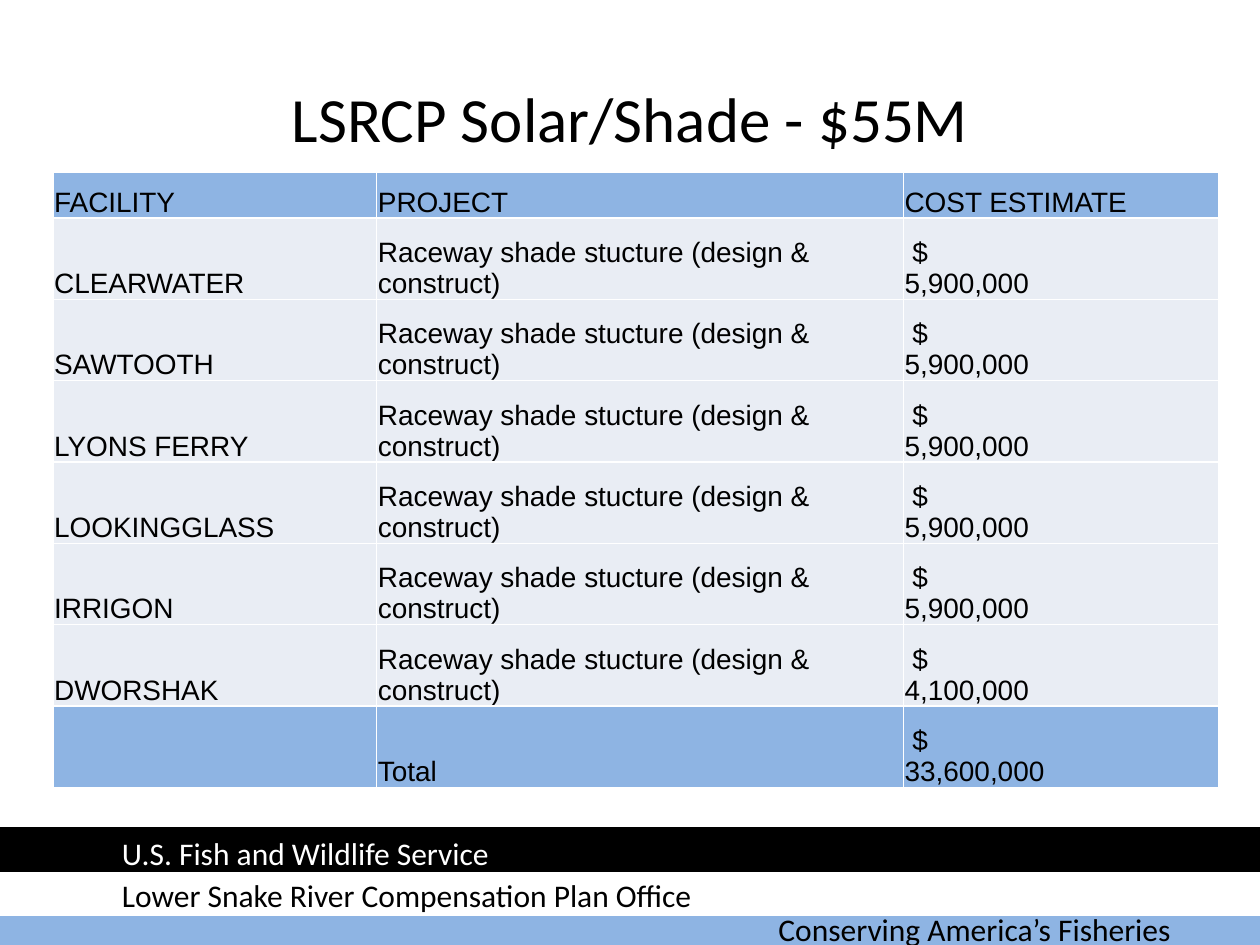
from lxml.etree import SubElement
from pptx import Presentation
from pptx.dml.color import RGBColor
from pptx.enum.shapes import MSO_SHAPE as Shape
from pptx.enum.text import MSO_ANCHOR as Anchor, PP_ALIGN as Align
from pptx.oxml.ns import qn
from pptx.util import Inches, Pt

BLACK = RGBColor(0x00, 0x00, 0x00)
WHITE = RGBColor(0xFF, 0xFF, 0xFF)
BLUE = RGBColor(0x8E, 0xB4, 0xE3)
PALE = RGBColor(0xE9, 0xED, 0xF4)

PROJECT = "Raceway shade stucture (design & construct)"
ESTIMATES = [
    ("CLEARWATER", "5,900,000"),
    ("SAWTOOTH", "5,900,000"),
    ("LYONS FERRY", "5,900,000"),
    ("LOOKINGGLASS", "5,900,000"),
    ("IRRIGON", "5,900,000"),
    ("DWORSHAK", "4,100,000"),
]
TOTAL = "33,600,000"
COLUMN_WIDTHS = [2.57, 4.18, 2.5]
HEADER_HEIGHT = 0.36


def set_values(target, values):
    for name, value in values.items():
        setattr(target, name, value)


def style_runs(paragraph, size, name, color):
    for run in paragraph.runs:
        set_values(run.font, {"size": Pt(size), "name": name})
        run.font.color.rgb = color


def add_text(slide, box, text, size, color, align=Align.LEFT, anchor=Anchor.TOP):
    frame = slide.shapes.add_textbox(*map(Inches, box)).text_frame
    set_values(frame, {"word_wrap": True, "vertical_anchor": anchor, "text": text})
    paragraph = frame.paragraphs[0]
    paragraph.alignment = align
    style_runs(paragraph, size, "Calibri", color)


def add_band(slide, box, color):
    band = slide.shapes.add_shape(Shape.RECTANGLE, *map(Inches, box))
    band.shadow.inherit = False
    band.fill.solid()
    band.fill.fore_color.rgb = color
    band.line.color.rgb = color
    band.line.width = Pt(2)


def add_footer(slide, left, top, width, height):
    band_height = 0.33
    add_band(slide, (left - 0.01, top + height - band_height, width, band_height), BLUE)
    add_band(slide, (left, top + 0.35, width, band_height), WHITE)
    add_band(slide, (left, top, width, band_height), BLACK)
    labels = [
        (6.08, 0.59, 3.67, "Conserving America’s Fisheries", BLACK),
        (0.87, -0.01, 4.16, "U.S. Fish and Wildlife Service", WHITE),
        (0.87, 0.32, 4.97, "Lower Snake River Compensation Plan Office", BLACK),
    ]
    for offset, drop, label_width, text, color in labels:
        add_text(slide, (left + offset, top + drop, label_width, 0.4), text, 18, color)


def add_borders(cell):
    properties = cell._tc.get_or_add_tcPr()
    for position, side in enumerate(("a:lnL", "a:lnR", "a:lnT", "a:lnB")):
        line = SubElement(properties, qn(side), w=str(Pt(1)))
        fill = SubElement(line, qn("a:solidFill"))
        SubElement(fill, qn("a:srgbClr"), val=str(WHITE))
        properties.remove(line)
        properties.insert(position, line)


def fill_cell(cell, text, color):
    cell.text = text
    inset = Inches(0.01)
    set_values(cell, {
        "vertical_anchor": Anchor.BOTTOM,
        "margin_left": inset,
        "margin_right": inset,
        "margin_top": inset,
        "margin_bottom": 0,
    })
    cell.fill.solid()
    cell.fill.fore_color.rgb = color
    add_borders(cell)
    style_runs(cell.text_frame.paragraphs[0], 16, "Arial", BLACK)


def add_cost_table(slide, left, top, width, height):
    rows = [("FACILITY", "PROJECT", "COST ESTIMATE")]
    rows += [(facility, PROJECT, f" $\v{cost}") for facility, cost in ESTIMATES]
    rows.append(("", "Total", f" $\v{TOTAL}"))
    table = slide.shapes.add_table(
        len(rows), len(COLUMN_WIDTHS), *map(Inches, (left, top, width, height))
    ).table
    set_values(table, {"first_row": False, "horz_banding": False})
    for column, column_width in zip(table.columns, COLUMN_WIDTHS):
        column.width = Inches(column_width)
    body_height = (height - HEADER_HEIGHT) / (len(rows) - 1)
    for index, texts in enumerate(rows):
        is_header = index == 0
        table.rows[index].height = Inches(HEADER_HEIGHT if is_header else body_height)
        color = BLUE if is_header or index == len(rows) - 1 else PALE
        for cell, text in zip(table.rows[index].cells, texts):
            fill_cell(cell, text, color)


def main():
    presentation = Presentation()
    set_values(presentation, {"slide_width": Inches(10), "slide_height": Inches(7.5)})
    slide = presentation.slides.add_slide(presentation.slide_layouts[6])
    add_footer(slide, 0, 6.58, 10, 0.92)
    add_text(slide, (0.5, 0.5, 9, 0.87), "LSRCP Solar/Shade - $55M", 36, BLACK,
             Align.CENTER, Anchor.MIDDLE)
    add_cost_table(slide, 0.42, 1.37, 9.25, 4.88)
    presentation.save("out.pptx")


if __name__ == "__main__":
    main()
